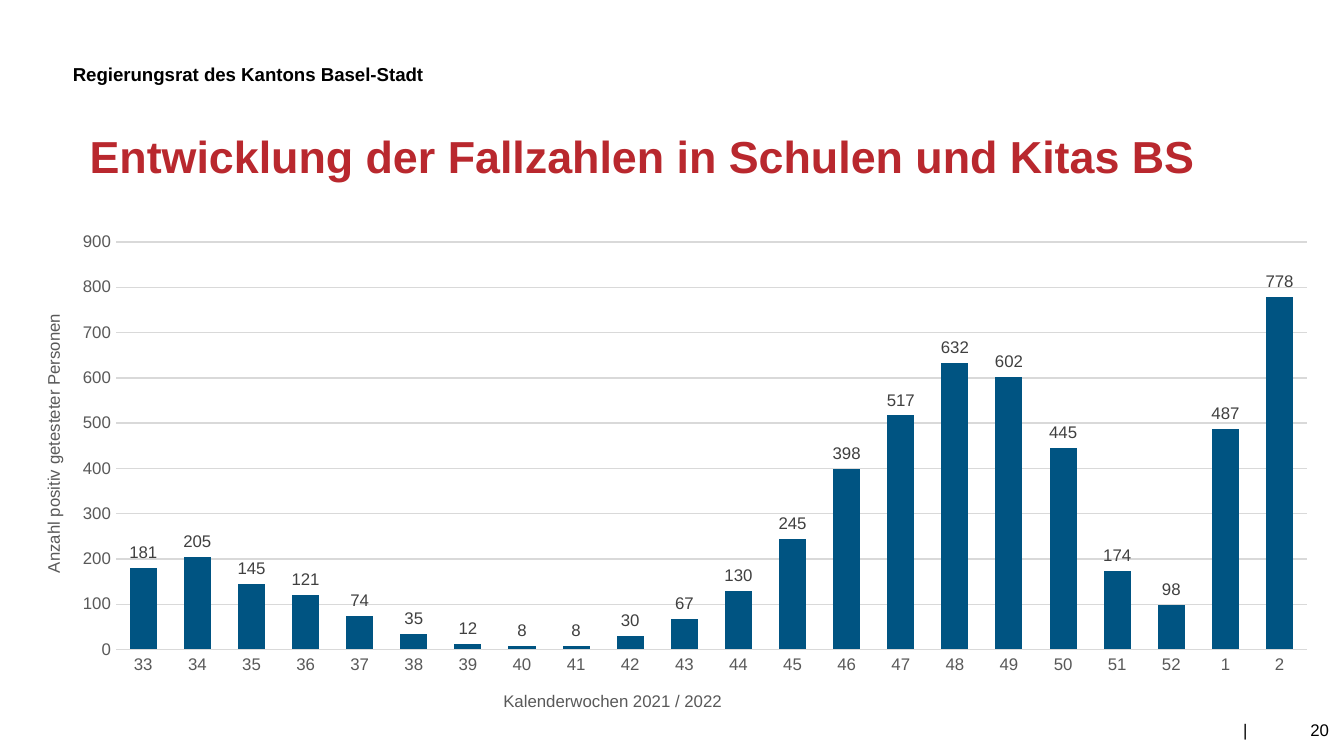
from lxml import etree
from pptx import Presentation
from pptx.chart.data import CategoryChartData
from pptx.dml.color import RGBColor
from pptx.enum.chart import XL_CHART_TYPE, XL_LABEL_POSITION, XL_TICK_MARK
from pptx.enum.text import MSO_ANCHOR, MSO_AUTO_SIZE, PP_ALIGN
from pptx.oxml.ns import qn
from pptx.util import Pt

PX = 9525
FONT = "Arial"
BLACK = RGBColor(0x00, 0x00, 0x00)
RED = RGBColor(0xB9, 0x28, 0x2E)
BLUE = RGBColor(0x00, 0x54, 0x82)
GREY = RGBColor(0x59, 0x59, 0x59)
DARK_GREY = RGBColor(0x40, 0x40, 0x40)
LIGHT_GREY = RGBColor(0xD9, 0xD9, 0xD9)
COLUMNS = XL_CHART_TYPE.COLUMN_CLUSTERED
OUTSIDE_END = XL_LABEL_POSITION.OUTSIDE_END
NO_TICK = XL_TICK_MARK.NONE
TOP = MSO_ANCHOR.TOP
NO_AUTOSIZE = MSO_AUTO_SIZE.NONE
LEFT = PP_ALIGN.LEFT


def set_font(font, size, color, bold=False):
    font.name = FONT
    font.size = Pt(size)
    font.bold = bold
    font.color.rgb = color


def set_layout(element, index, **settings):
    """Give a chart element a manual layout, as fractions of the chart."""
    for old in element.findall(qn("c:layout")):
        element.remove(old)
    layout = etree.Element(qn("c:layout"))
    element.insert(index, layout)
    manual = etree.SubElement(layout, qn("c:manualLayout"))
    for name, value in settings.items():
        etree.SubElement(manual, qn("c:" + name)).set("val", str(value))


deck = Presentation()
deck.slide_width = 960 * PX
deck.slide_height = 540 * PX
page = deck.slides.add_slide(deck.slide_layouts[5])

# Title, header and page number
title = page.shapes.title
header = page.shapes.add_textbox(0, 0, PX, PX)
number = page.shapes.add_textbox(0, 0, PX, PX)
for box, place, inset, text, size, color, bold in (
    (title, (64, 88, 854, 29), 4,
     "Entwicklung der Fallzahlen in Schulen und Kitas BS", 24, RED, True),
    (header, (52, 45, 362, 16), 0,
     "Regierungsrat des Kantons Basel-Stadt", 10, BLACK, True),
    (number, (888, 511, 72, 29), 3, "|\t20", 9, BLACK, False),
):
    box.left, box.top, box.width, box.height = [length * PX for length in place]
    frame = box.text_frame
    frame.margin_left = frame.margin_right = frame.margin_bottom = 0
    frame.margin_top = inset * PX
    frame.word_wrap = True
    frame.auto_size = NO_AUTOSIZE
    frame.vertical_anchor = TOP
    para = frame.paragraphs[0]
    para.alignment = LEFT
    span = para.add_run()
    span.text = text
    set_font(span.font, size, color, bold)

# Cases per calendar week
data = CategoryChartData()
data.categories = [str(week) for week in (*range(33, 53), 1, 2)]
data.add_series("Series 1", (
    181, 205, 145, 121, 74, 35, 12, 8, 8, 30, 67,
    130, 245, 398, 517, 632, 602, 445, 174, 98, 487, 778))
chart = page.shapes.add_chart(
    COLUMNS, 19 * PX, 127 * PX, 915 * PX, 385 * PX, data).chart
chart.has_legend = False
chart.has_title = False
set_font(chart.font, 10, BLACK)
set_layout(chart._chartSpace.chart.plotArea, 0, layoutTarget="inner",
           xMode="edge", yMode="edge", x=0.07, y=0.12, w=0.93, h=0.76)

plot = chart.plots[0]
plot.gap_width = 100
plot.overlap = -24
plot.vary_by_categories = False
fill = plot.series[0].format.fill
fill.solid()
fill.fore_color.rgb = BLUE
plot.has_data_labels = True
labels = plot.data_labels
labels.show_value = True
labels.position = OUTSIDE_END
set_font(labels.font, 9, DARK_GREY)

weeks, cases = chart.category_axis, chart.value_axis
for axis, text, x, y, rotation in (
    (weeks, "Kalenderwochen 2021 / 2022", 0.37, 0.95, 0),
    (cases, "Anzahl positiv getesteter Personen", 0.01, 0.25, -5400000),
):
    axis.major_tick_mark = axis.minor_tick_mark = NO_TICK
    set_font(axis.tick_labels.font, 9, GREY)
    frame = axis.axis_title.text_frame
    span = frame.paragraphs[0].add_run()
    span.text = text
    set_font(span.font, 9, GREY)
    frame._txBody.bodyPr.set("rot", str(rotation))
    set_layout(axis.axis_title._element, 1,
               xMode="edge", yMode="edge", x=x, y=y)

weeks.format.line.color.rgb = LIGHT_GREY
weeks.format.line.width = Pt(1)
cases.format.line.fill.background()
cases.minimum_scale = 0
cases.maximum_scale = 900
cases.major_unit = 100
cases.has_major_gridlines = True
grid = cases.major_gridlines.format.line
grid.color.rgb = LIGHT_GREY
grid.width = Pt(0.75)

deck.save("out.pptx")
